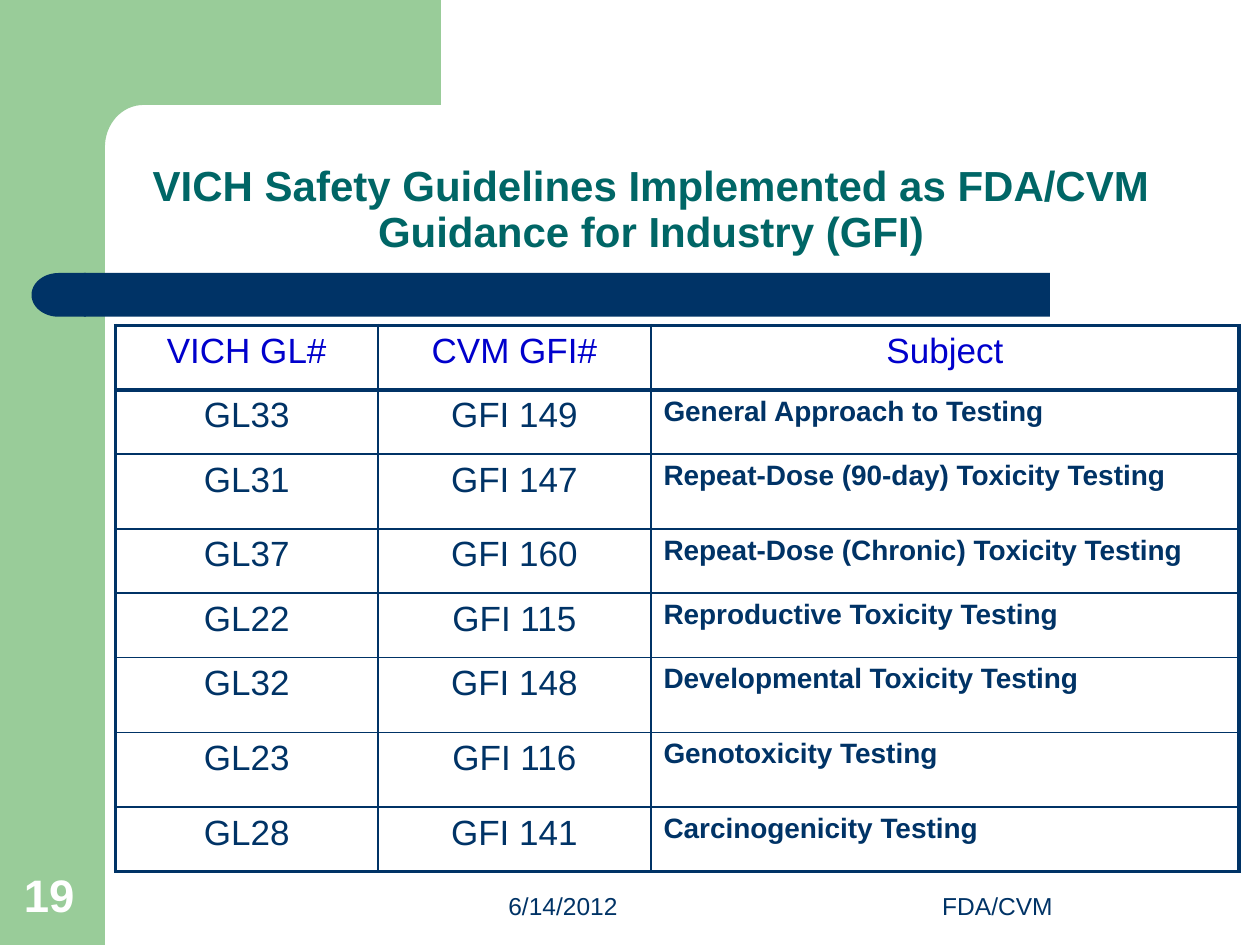
from math import cos, pi, sin

from lxml.etree import SubElement
from pptx import Presentation
from pptx.dml.color import RGBColor
from pptx.enum.shapes import MSO_SHAPE
from pptx.enum.text import MSO_ANCHOR, MSO_AUTO_SIZE, PP_ALIGN
from pptx.oxml.ns import qn
from pptx.util import Pt

NAVY, GREEN, TEAL, BLUE, WHITE = "003366", "99CC99", "006666", "0000CC", "FFFFFF"
LEFT, MID, RIGHT = PP_ALIGN.LEFT, PP_ALIGN.CENTER, PP_ALIGN.RIGHT
THICK, THIN = 2.25, 1

HEAD = ["VICH GL#", "CVM GFI#", "Subject"]
GUIDES = [
    ("GL33", "GFI 149", "General Approach to Testing"),
    ("GL31", "GFI 147", "Repeat-Dose (90-day) Toxicity Testing"),
    ("GL37", "GFI 160", "Repeat-Dose (Chronic) Toxicity Testing"),
    ("GL22", "GFI 115", "Reproductive Toxicity Testing"),
    ("GL32", "GFI 148", "Developmental Toxicity Testing"),
    ("GL23", "GFI 116", "Genotoxicity Testing"),
    ("GL28", "GFI 141", "Carcinogenicity Testing"),
]
COLS = [150, 156, 336]
LOW, TALL = 36.75, 42.75
ROWS = [LOW, LOW, TALL, LOW, LOW, TALL, TALL, LOW]


def color(code):
    return RGBColor.from_string(code)


def paint(shape, code):
    shape.shadow.inherit = False
    shape.fill.solid()
    shape.fill.fore_color.rgb = color(code)
    shape.line.fill.background()


def write(frame, text, size, code, align=LEFT, bold=False, space=1.0):
    frame.text = text
    frame.word_wrap = True
    para = frame.paragraphs[0]
    para.alignment, para.line_spacing = align, space
    font = para.runs[0].font
    looks = {"name": "Arial", "size": Pt(size), "bold": bold}
    for key, value in looks.items():
        setattr(font, key, value)
    font.color.rgb = color(code)


def add_block(slide, kind, box, code):
    shape = slide.shapes.add_shape(kind, *map(Pt, box))
    paint(shape, code)
    return shape


def add_frame(slide, box):
    """Green side band and top block, joined by a rounded inner corner."""
    x, y, w, h = box
    band, top, rx, ry = 60, 60, 22, 24
    add_block(slide, MSO_SHAPE.RECTANGLE, (x, y, band, h), GREEN)
    angles = [pi / 2 * step / 16 for step in range(17)]
    curve = [(x + band + rx - rx * sin(a), y + top + ry - ry * cos(a))
             for a in angles]
    edge = [(x + w, y + top), *curve, (x + band, y + 92),
            (x + 36, y + 92), (x + 36, y)]
    build = slide.shapes.build_freeform(Pt(x + w), Pt(y), scale=1.0)
    build.add_line_segments([(Pt(a), Pt(b)) for a, b in edge], close=True)
    paint(build.convert_to_shape(), GREEN)


def add_bar(slide, box):
    """Navy rule with a round left end."""
    x, y, w, h = box
    cap = 30
    add_block(slide, MSO_SHAPE.RECTANGLE, (x + cap, y, w - cap, h), NAVY)
    end = add_block(slide, MSO_SHAPE.FLOWCHART_DELAY, (x, y, cap + 1, h), NAVY)
    end.rotation = 180


def add_title(slide, box, text):
    title = slide.shapes.title
    for key, value in zip(("left", "top", "width", "height"), box):
        setattr(title, key, Pt(value))
    frame = title.text_frame
    frame.auto_size = MSO_AUTO_SIZE.NONE
    frame.vertical_anchor = MSO_ANCHOR.BOTTOM
    write(frame, text, 24, TEAL, MID, True, 0.9)


def add_note(slide, box, text, **looks):
    frame = slide.shapes.add_textbox(*map(Pt, box)).text_frame
    frame.vertical_anchor = MSO_ANCHOR.BOTTOM
    write(frame, text, **looks)


def set_edges(cell, widths):
    props = cell._tc.get_or_add_tcPr()
    for spot, (side, width) in enumerate(widths.items()):
        line = props.makeelement(qn("a:" + side), {"w": str(Pt(width))})
        fill = SubElement(line, qn("a:solidFill"))
        SubElement(fill, qn("a:srgbClr"), val=NAVY)
        props.insert(spot, line)


def add_grid(slide, box):
    x, y = box
    data = [HEAD, *GUIDES]
    table = slide.shapes.add_table(
        len(ROWS), len(COLS), Pt(x), Pt(y), Pt(sum(COLS)), Pt(sum(ROWS))).table
    table.first_row = table.horz_banding = False
    for col, width in zip(table.columns, COLS):
        col.width = Pt(width)
    for row, height in zip(table.rows, ROWS):
        row.height = Pt(height)
    last, end = len(ROWS) - 1, len(COLS) - 1
    for r, line in enumerate(data):
        for c, text in enumerate(line):
            cell = table.cell(r, c)
            cell.fill.background()
            topic = r > 0 and c == end
            write(cell.text_frame, text, 16 if topic else 20,
                  NAVY if r else BLUE, LEFT if topic else MID, topic)
            set_edges(cell, {
                "lnL": THICK if c == 0 else THIN,
                "lnR": THICK if c == end else THIN,
                "lnT": THICK if r < 2 else THIN,
                "lnB": THICK if r in (0, last) else THIN,
            })


def main():
    deck = Presentation()
    deck.slide_width, deck.slide_height = Pt(720), Pt(540)
    slide = deck.slides.add_slide(deck.slide_layouts[5])
    add_frame(slide, (0, 0, 252, 540))
    add_bar(slide, (18, 156, 582, 25))
    add_note(slide, (192, 492, 168, 37.5), "6/14/2012",
             size=14, code=NAVY, align=RIGHT)
    add_note(slide, (456, 492, 228, 37.5), "FDA/CVM",
             size=14, code=NAVY, align=MID)
    add_note(slide, (6.5, 492, 46, 38), "19", size=26, code=WHITE, bold=True)
    add_title(slide, (60, 60, 624, 90),
              "VICH Safety Guidelines Implemented as FDA/CVM "
              "Guidance for Industry (GFI)")
    add_grid(slide, (66, 186))
    deck.save("out.pptx")


if __name__ == "__main__":
    main()
